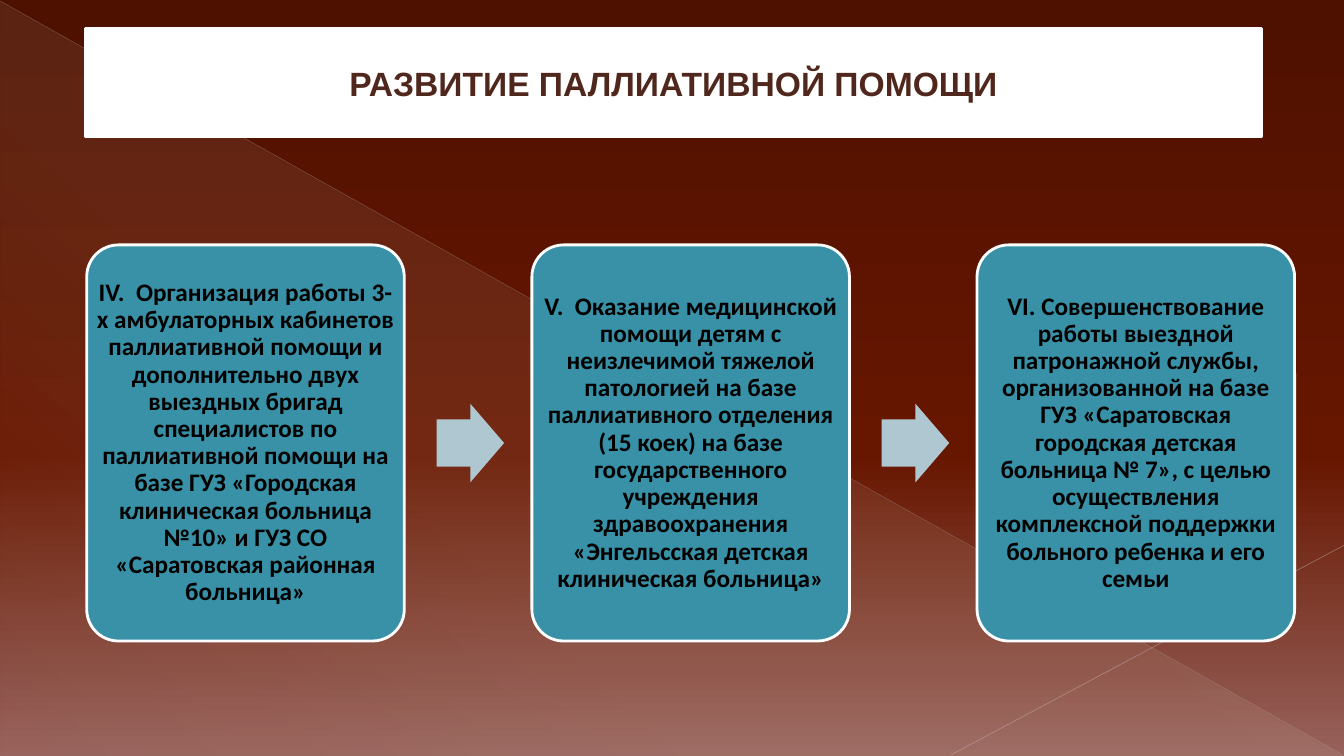
import pptx
import pptx.util
import pptx.dml.color
import pptx.enum.shapes
import pptx.enum.text
import pptx.oxml
import pptx.oxml.ns
from lxml import etree

Inches = pptx.util.Inches
Pt = pptx.util.Pt
RGBColor = pptx.dml.color.RGBColor
SHAPE = pptx.enum.shapes.MSO_SHAPE
qn = pptx.oxml.ns.qn

DARK = RGBColor(0x4E, 0x11, 0x00)
RUST = RGBColor(0x67, 0x16, 0x00)
ROSE = RGBColor(0x97, 0x62, 0x5B)
SAND = RGBColor(0xE7, 0xDE, 0xC9)
GREY = RGBColor(0xBD, 0xB3, 0xB2)
PALE = RGBColor(0xC5, 0xBC, 0xBB)
TEAL = RGBColor(0x38, 0x91, 0xA7)
MIST = RGBColor(0xAF, 0xC7, 0xD0)
BROWN = RGBColor(0x4F, 0x27, 0x1C)
WHITE = RGBColor(0xFF, 0xFF, 0xFF)
BLACK = RGBColor(0x00, 0x00, 0x00)

TITLE = "РАЗВИТИЕ ПАЛЛИАТИВНОЙ ПОМОЩИ"
STEPS = [
    "IV.  Организация работы 3-х амбулаторных кабинетов паллиативной "
    "помощи и дополнительно двух выездных бригад специалистов по "
    "паллиативной помощи на базе ГУЗ «Городская клиническая больница "
    "№10» и ГУЗ СО «Саратовская районная больница»",
    "V.  Оказание медицинской помощи детям с неизлечимой тяжелой "
    "патологией на базе паллиативного отделения (15 коек) на базе "
    "государственного учреждения здравоохранения «Энгельсская детская "
    "клиническая больница»",
    "VI. Совершенствование работы выездной патронажной службы, "
    "организованной на базе ГУЗ «Саратовская городская детская больница "
    "№ 7», с целью осуществления комплексной поддержки больного ребенка "
    "и его семьи",
]


def fade(color, alpha):
    """Give a colour element an opacity in percent."""
    etree.SubElement(color, qn("a:alpha")).set("val", str(alpha * 1000))


def blend(fill, root, angle, stops):
    """Fill with a gradient of (place, colour, opacity) stops."""
    fill.gradient()
    grad = root.xpath(".//a:gradFill")[0]
    old = grad.find(qn("a:gsLst"))
    new = etree.Element(qn("a:gsLst"))
    for place, color, alpha in stops:
        stop = etree.SubElement(new, qn("a:gs"), pos=str(place * 1000))
        tint = etree.SubElement(stop, qn("a:srgbClr"), val=str(color))
        if alpha < 100:
            fade(tint, alpha)
    grad.replace(old, new)
    grad.find(qn("a:lin")).set("ang", str(angle * 60000))


def add_form(slide, kind, box, color=None, edge=None):
    form = slide.shapes.add_shape(kind, *map(Inches, box))
    form.shadow.inherit = False
    if color is not None:
        form.fill.solid()
        form.fill.fore_color.rgb = color
    if edge is None:
        form.line.fill.background()
    else:
        form.line.color.rgb = edge
        form.line.width = Pt(2)
    return form


def add_ray(slide, ends, color, width, alpha):
    ray = slide.shapes.add_connector(
        pptx.enum.shapes.MSO_CONNECTOR.STRAIGHT, *map(Inches, ends))
    ray.line.color.rgb = color
    ray.line.width = Pt(width)
    fade(ray.element.xpath(".//a:ln//a:srgbClr")[0], alpha)
    etree.SubElement(ray.element.spPr, qn("a:effectLst"))


def write(form, text, font, size, color):
    frame = form.text_frame
    frame.word_wrap = True
    frame.vertical_anchor = pptx.enum.text.MSO_ANCHOR.MIDDLE
    para = frame.paragraphs[0]
    para.text = text
    para.alignment = pptx.enum.text.PP_ALIGN.CENTER
    para.font.name = font
    para.font.size = Pt(size)
    para.font.bold = True
    para.font.color.rgb = color
    return frame


def add_back(slide, width, height):
    blend(slide.background.fill, slide.element, 90,
          [(0, DARK, 100), (60, RUST, 100), (100, ROSE, 100)])
    wedge = add_form(slide, SHAPE.RIGHT_TRIANGLE,
                     (0.01, 0.02, width - 0.02, height - 0.02))
    blend(wedge.fill, wedge.element, 133,
          [(0, SAND, 10), (70, SAND, 8), (100, SAND, 1)])
    add_ray(slide, (0, 0.01, width - 0.01, height - 0.01), GREY, 0.39, 35)
    add_ray(slide, (width, 5.41, 9.43, height - 0.01), PALE, 0.47, 45)


def add_title(slide, box):
    write(add_form(slide, SHAPE.RECTANGLE, box, WHITE, WHITE),
          TITLE, "Arial", 24, BROWN)


def add_flow(slide, left, top, width, height):
    """Place the steps evenly across the box, with an arrow in each gap."""
    card, wide, tall = 3.15, 0.67, 0.78
    pitch = (width - card) / (len(STEPS) - 1)
    for i, step in enumerate(STEPS):
        x = left + i * pitch
        form = add_form(slide, SHAPE.ROUNDED_RECTANGLE,
                        (x, top, card, height), TEAL, WHITE)
        form.adjustments[0] = 0.1
        frame = write(form, step, "Calibri", 18, BLACK)
        frame.margin_left = frame.margin_right = 0
        frame.paragraphs[0].line_spacing = 0.9
        if i < len(STEPS) - 1:
            arrow = add_form(
                slide, SHAPE.RIGHT_ARROW,
                (x + card + 0.32, top + (height - tall) / 2, wide, tall), MIST)
            arrow.adjustments[0] = 0.6
            arrow.adjustments[1] = 0.5


def main():
    deck = pptx.Presentation()
    deck.slide_width = Inches(13.33)
    deck.slide_height = Inches(7.5)
    slide = deck.slides.add_slide(deck.slide_layouts[6])
    add_back(slide, 13.33, 7.5)
    add_flow(slide, 0.86, 2.43, 11.98, 3.93)
    add_title(slide, (0.85, 0.28, 11.66, 1.08))
    deck.save("out.pptx")


if __name__ == "__main__":
    main()
